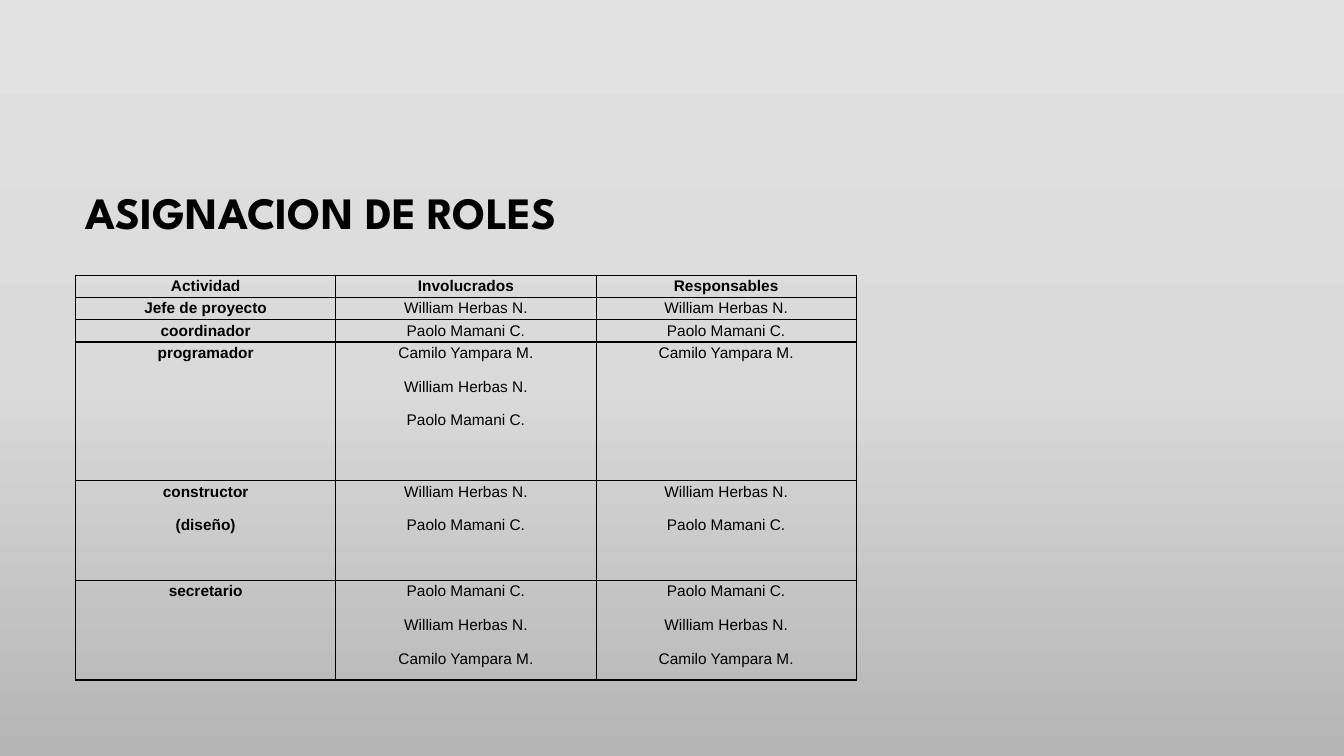
import copy

from lxml import etree
from pptx import Presentation
from pptx.dml.color import RGBColor
from pptx.enum import text
from pptx.oxml.ns import qn
from pptx.util import Pt

WILLIAM = "William Herbas N."
PAOLO = "Paolo Mamani C."
CAMILO = "Camilo Yampara M."
ROLES = [
    (15.9, ["Actividad"], ["Involucrados"], ["Responsables"]),
    (15.9, ["Jefe de proyecto"], [WILLIAM], [WILLIAM]),
    (15.9, ["coordinador"], [PAOLO], [PAOLO]),
    (99.2, ["programador"], [CAMILO, WILLIAM, PAOLO], [CAMILO]),
    (71.2, ["constructor", "(diseño)"], [WILLIAM, PAOLO], [WILLIAM, PAOLO]),
    (71.2, ["secretario"], [PAOLO, WILLIAM, CAMILO], [PAOLO, WILLIAM, CAMILO]),
]


def rgb(value):
    return RGBColor.from_string(value)


def format_font(font, name, size, color="000000", bold=False):
    font.name = name
    font.size = Pt(size)
    font.bold = bold
    font.color.rgb = rgb(color)


def set_background(s, stops, angle):
    fill = s.background.fill
    fill.gradient()
    fill.gradient_angle = angle
    gs_lst = s._element.find(".//" + qn("a:gsLst"))
    while len(gs_lst) < len(stops):
        gs_lst.append(copy.deepcopy(gs_lst[0]))
    for stop, (position, color) in zip(fill.gradient_stops, stops):
        stop.position = position
        stop.color.rgb = rgb(color)


def set_title(s, content, left, top, width, height, bottom_inset):
    sp = s.shapes.title
    sp.left, sp.top, sp.width, sp.height = map(Pt, (left, top, width, height))
    tf = sp.text_frame
    tf.word_wrap = True
    tf.auto_size = text.MSO_AUTO_SIZE.NONE
    tf.vertical_anchor = text.MSO_ANCHOR.BOTTOM
    tf.margin_bottom = Pt(bottom_inset)
    p = tf.paragraphs[0]
    p.alignment = text.PP_ALIGN.LEFT
    p.line_spacing = 0.9
    r = p.add_run()
    r.text = content
    format_font(r.font, "League Spartan", 32, bold=True)


def set_borders(cell, color="000000", width=1):
    tc_pr = cell._tc.get_or_add_tcPr()
    for i, side in enumerate(("lnL", "lnR", "lnT", "lnB")):
        ln = etree.Element(qn("a:" + side), w=str(Pt(width)))
        fill = etree.SubElement(ln, qn("a:solidFill"))
        etree.SubElement(fill, qn("a:srgbClr"), val=color)
        tc_pr.insert(i, ln)


def fill_cell(cell, lines, bold):
    cell.fill.background()
    set_borders(cell)
    cell.margin_left = cell.margin_right = Pt(5)
    cell.margin_top = cell.margin_bottom = 0
    tf = cell.text_frame
    for i, line in enumerate(lines):
        p = tf.add_paragraph() if i else tf.paragraphs[0]
        p.alignment = text.PP_ALIGN.CENTER
        p.line_spacing = 1.15
        p.space_after = Pt(10)
        r = p.add_run()
        r.text = line
        format_font(r.font, "Arial", 11, bold=bold)


def add_roles_table(s, left, top, col_width):
    height = sum(row[0] for row in ROLES)
    frame = s.shapes.add_table(len(ROLES), 3, Pt(left), Pt(top),
                               Pt(3 * col_width), Pt(height))
    table = frame.table
    table.first_row = table.horz_banding = False
    for column in table.columns:
        column.width = Pt(col_width)
    for i, (row_height, *cells) in enumerate(ROLES):
        table.rows[i].height = Pt(row_height)
        for j, lines in enumerate(cells):
            fill_cell(table.cell(i, j), lines, bold=i == 0 or j == 0)


def main():
    prs = Presentation()
    prs.slide_width, prs.slide_height = Pt(960), Pt(540)
    s = prs.slides.add_slide(prs.slide_layouts[5])
    set_background(s, [(0, "E2E2E2"), (0.5, "DADADA"), (1, "B5B5B5")], 270)
    set_title(s, "ASIGNACION DE ROLES", 54, 120, 541.5, 126, 75)
    add_roles_table(s, 54, 196.6, 185.9)
    prs.save("out.pptx")


if __name__ == "__main__":
    main()
